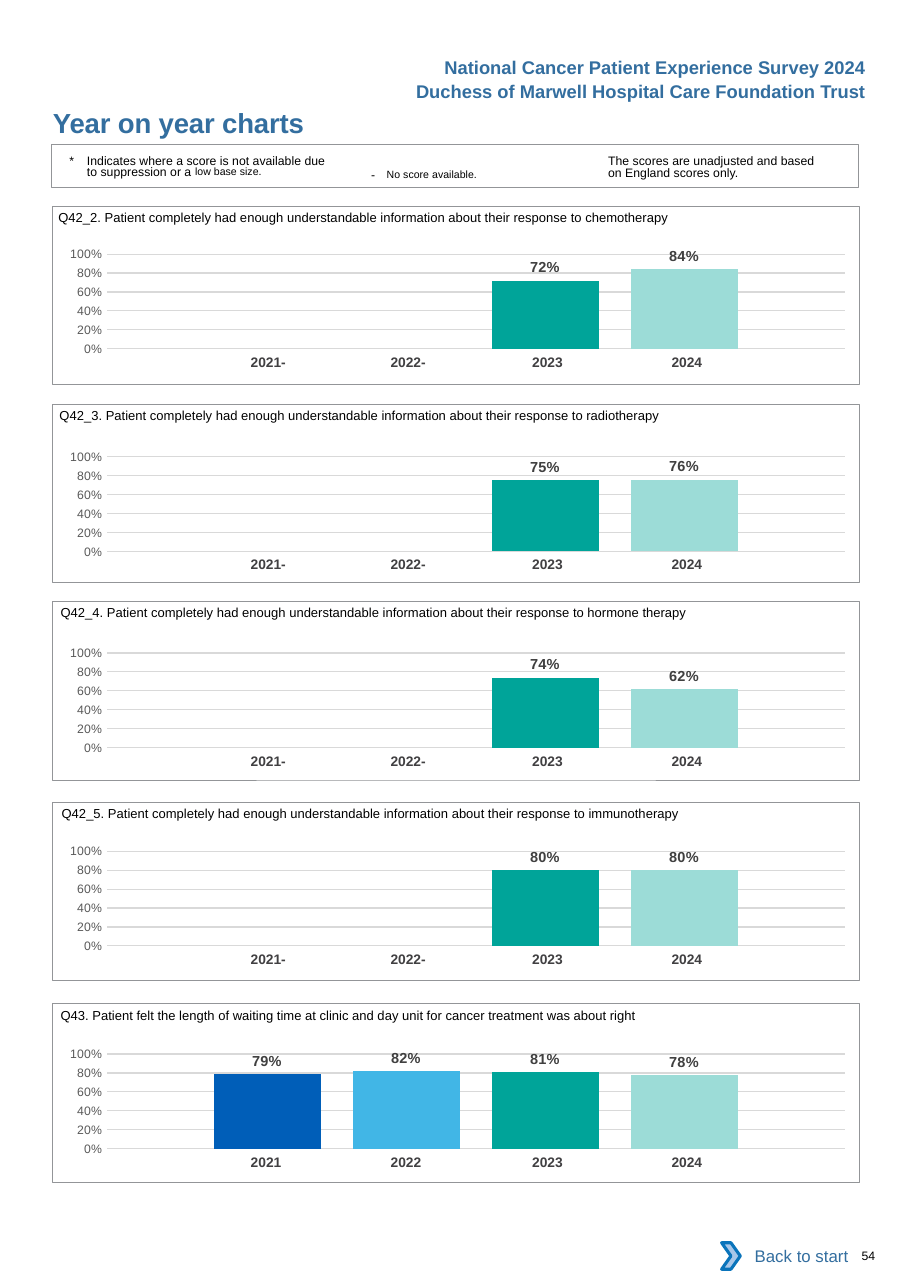
from lxml import etree
from pptx import Presentation
from pptx.chart.data import CategoryChartData
from pptx.dml.color import RGBColor
from pptx.enum.chart import XL_CHART_TYPE, XL_LABEL_POSITION, XL_TICK_LABEL_POSITION, XL_TICK_MARK
from pptx.enum.shapes import MSO_SHAPE
from pptx.enum.text import MSO_ANCHOR, MSO_AUTO_SIZE, PP_ALIGN
from pptx.oxml import parse_xml
from pptx.oxml.ns import nsdecls, qn
from pptx.util import Inches, Pt

COLORS = {
    "heading": "336E9F", "text": "000000", "frame": "939598", "year": "414042",
    "axis": "595959", "grid": "D9D9D9", "label": "404040", "white": "FFFFFF",
    "arrow": "A8C7E9", "arrow_line": "0A74BB",
}
YEAR_COLORS = {"2021": "005EB8", "2022": "41B6E6", "2023": "00A499", "2024": "9CDCD7"}
YEAR_WIDTHS = [1.27, 1.27, 1.34, 1.27]
YEAR_RIGHT_MARGINS = [0, 0, 0.04, 0.12]
RESPONSE = "Patient completely had enough understandable information about their response to "
PANELS = [
    (1.87, 2.12, 0.53, "Q42_2. " + RESPONSE + "chemotherapy", [None, None, 0.72, 0.84]),
    (3.67, 3.96, 0.54, "Q42_3. " + RESPONSE + "radiotherapy", [None, None, 0.75, 0.76]),
    (5.46, 5.74, 0.55, "Q42_4. " + RESPONSE + "hormone therapy", [None, None, 0.74, 0.62]),
    (7.28, 7.54, 0.56, "Q42_5. " + RESPONSE + "immunotherapy", [None, None, 0.8, 0.8]),
    (9.11, 9.38, 0.55,
     "Q43. Patient felt the length of waiting time at clinic and day unit for cancer "
     "treatment was about right", [0.79, 0.82, 0.81, 0.78]),
]


def rgb(name):
    """Return the palette colour with this name."""
    return RGBColor.from_string(COLORS[name])


def format_font(font, size, color, bold=False):
    """Apply the slide's font with a size, colour and weight."""
    font.name = "Arial"
    font.size = Pt(size)
    font.bold = bold
    font.color.rgb = rgb(color)


def set_margins(area, left=0, top=0, right=0, bottom=0):
    """Set the inner margins of a text frame or table cell in inches."""
    area.margin_left, area.margin_top = Inches(left), Inches(top)
    area.margin_right, area.margin_bottom = Inches(right), Inches(bottom)


def add_text(slide, box, text, size, color="text", bold=False, align=PP_ALIGN.LEFT, top=0):
    """Add a one-paragraph text box and return its paragraph."""
    frame = slide.shapes.add_textbox(*map(Inches, box)).text_frame
    frame.word_wrap = True
    set_margins(frame, top=top)
    paragraph = frame.paragraphs[0]
    paragraph.text = text
    paragraph.alignment = align
    for run in paragraph.runs:
        format_font(run.font, size, color, bold)
    return paragraph


def add_raised_run(paragraph, text, baseline):
    """Append a 12 pt run raised by a share of the line, in thousandths of a percent."""
    run = paragraph.add_run()
    run.text = text
    format_font(run.font, 12, "text")
    run._r.get_or_add_rPr().set("baseline", str(baseline))


def add_frame(slide, box, width):
    """Add an unfilled grey outline."""
    frame = slide.shapes.add_shape(MSO_SHAPE.RECTANGLE, *map(Inches, box))
    frame.shadow.inherit = False
    frame.fill.background()
    frame.line.color.rgb = rgb("frame")
    frame.line.width = Pt(width)


def add_years(slide, top, scores):
    """Add the row of years, marking those without a score with a dash."""
    table = slide.shapes.add_table(
        1, 4, Inches(1.73), Inches(top), Inches(sum(YEAR_WIDTHS)), Inches(0.27)).table
    table.first_row = table.horz_banding = False
    for column, (year, score) in enumerate(zip(YEAR_COLORS, scores)):
        table.columns[column].width = Inches(YEAR_WIDTHS[column])
        cell = table.cell(0, column)
        cell.fill.background()
        left = 0.14 if score is None else 0.1
        set_margins(cell, left, 0.05, YEAR_RIGHT_MARGINS[column], 0.05)
        paragraph = cell.text_frame.paragraphs[0]
        paragraph.text = year + "-" if score is None else year
        paragraph.alignment = PP_ALIGN.CENTER
        format_font(paragraph.runs[0].font, 9, "year", True)


def set_plot_area(chart):
    """Fix the inner plot area and make the chart background clear."""
    chart_space = chart._chartSpace
    plot_area = chart_space.chart.plotArea
    for old in plot_area.findall(qn("c:layout")):
        plot_area.remove(old)
    layout = parse_xml(f"<c:layout {nsdecls('c')}><c:manualLayout/></c:layout>")
    settings = {"layoutTarget": "inner", "xMode": "edge", "yMode": "edge",
                "x": "0.079", "y": "0.145", "w": "0.915", "h": "0.666"}
    for tag, value in settings.items():
        etree.SubElement(layout[0], qn(f"c:{tag}")).set("val", value)
    plot_area.insert(0, layout)
    chart_space.chart.addnext(parse_xml(
        f"<c:spPr {nsdecls('c', 'a')}><a:noFill/><a:ln><a:noFill/></a:ln></c:spPr>"))


def add_score_chart(slide, top, scores):
    """Add the column chart with one series per year."""
    data = CategoryChartData(number_format="0%")
    data.categories = ["1"]
    for number, score in enumerate(scores, 1):
        data.add_series(f"Series {number}", [score])
    chart = slide.shapes.add_chart(
        XL_CHART_TYPE.COLUMN_CLUSTERED, Inches(0.39), Inches(top), Inches(7.32),
        Inches(1.29), data).chart
    chart.has_legend = chart.has_title = False
    chart.font.name, chart.font.size = "Calibri", Pt(10)
    set_plot_area(chart)
    chart.category_axis.visible = False
    axis = chart.value_axis
    axis.minimum_scale, axis.maximum_scale, axis.major_unit = 0, 1, 0.2
    axis.major_tick_mark = axis.minor_tick_mark = XL_TICK_MARK.NONE
    axis.tick_label_position = XL_TICK_LABEL_POSITION.NEXT_TO_AXIS
    axis.tick_labels.number_format = "0%"
    axis.tick_labels.number_format_is_linked = False
    format_font(axis.tick_labels.font, 8, "axis")
    axis.format.line.fill.background()
    axis.major_gridlines.format.line.color.rgb = rgb("grid")
    axis.major_gridlines.format.line.width = Pt(0.75)
    plot = chart.plots[0]
    plot.gap_width, plot.overlap, plot.vary_by_categories = 200, -30, False
    for series, color in zip(plot.series, YEAR_COLORS.values()):
        series.format.fill.solid()
        series.format.fill.fore_color.rgb = RGBColor.from_string(color)
        labels = series.data_labels
        labels.show_value = True
        labels.position = XL_LABEL_POSITION.OUTSIDE_END
        labels.number_format, labels.number_format_is_linked = "0%", False
        format_font(labels.font, 9.5, "label", True)


def add_title(slide):
    """Place and format the slide title."""
    title = slide.shapes.title
    title.left, title.top, title.width, title.height = map(Inches, (0.47, 0.96, 4.5, 0.3))
    frame = title.text_frame
    frame.text = "Year on year charts"
    frame.auto_size = MSO_AUTO_SIZE.NONE
    frame.vertical_anchor = MSO_ANCHOR.TOP
    set_margins(frame, left=0.01)
    frame.paragraphs[0].alignment = PP_ALIGN.LEFT
    heading = frame.paragraphs[0].runs[0]
    format_font(heading.font, 18, "heading", True)
    heading._r.get_or_add_rPr().set("spc", "-10")


def add_key(slide):
    """Add the box that explains the symbols and scores."""
    add_frame(slide, (0.47, 1.31, 7.32, 0.39), 0.75)
    suppressed = add_text(
        slide, (0.63, 1.38, 2.4, 0.3),
        "*\tIndicates where a score is not available due to suppression or a ", 8, top=0.03)
    add_raised_run(suppressed, "low base size.", 7000)
    properties = suppressed._p.get_or_add_pPr()
    properties.set("marL", str(Inches(0.16)))
    properties.set("indent", str(-Inches(0.16)))
    missing = add_text(slide, (3.37, 1.41, 1.63, 0.24), "- ", 8, top=0.05)
    missing.runs[0]._r.get_or_add_rPr().set("spc", "260")
    add_raised_run(missing, "No score available.", 3000)
    unadjusted = add_text(
        slide, (5.52, 1.38, 1.95, 0.27),
        "The scores are unadjusted and based on England scores only.", 8, top=0.03)
    for paragraph in (suppressed, unadjusted):
        paragraph.line_spacing = Pt(8.1)
        paragraph.space_before = Pt(2.5)


def add_back_to_start(slide):
    """Add the footer label with its chevron."""
    label = slide.shapes.add_shape(
        MSO_SHAPE.RECTANGLE, Inches(6.62), Inches(11.19), Inches(1.18), Inches(0.42))
    chevron = slide.shapes.add_shape(
        MSO_SHAPE.CHEVRON, Inches(6.55), Inches(11.28), Inches(0.17), Inches(0.24))
    for part, color in ((label, "white"), (chevron, "arrow")):
        part.shadow.inherit = False
        part.fill.solid()
        part.fill.fore_color.rgb = rgb(color)
    label.line.fill.background()
    chevron.line.color.rgb = rgb("arrow_line")
    chevron.line.width = Pt(2)
    label.text_frame.text = "Back to start"
    label.text_frame.vertical_anchor = MSO_ANCHOR.MIDDLE
    label.text_frame.paragraphs[0].alignment = PP_ALIGN.RIGHT
    format_font(label.text_frame.paragraphs[0].runs[0].font, 11, "heading")


def main():
    """Build the slide and save it."""
    deck = Presentation()
    deck.slide_width, deck.slide_height = Inches(8.26), Inches(11.69)
    slide = deck.slides.add_slide(deck.slide_layouts[5])
    add_title(slide)
    for top, line in ((0.46, "National Cancer Patient Experience Survey 2024"),
                      (0.68, "Duchess of Marwell Hospital Care Foundation Trust")):
        add_text(slide, (3.36, top, 4.5, 0.3), line, 12, "heading", True, PP_ALIGN.RIGHT, 0.05)
    add_key(slide)
    for top, chart_top, question_left, question, scores in PANELS:
        add_text(slide, (question_left, top - 0.06, 7.24, 0.24), question, 8.5, top=0.09)
        add_years(slide, chart_top + 1.05, scores)
        add_score_chart(slide, chart_top, scores)
        add_frame(slide, (0.48, top, 7.32, 1.62), 0.5)
    add_back_to_start(slide)
    add_text(slide, (7.82, 11.33, 0.4, 0.13), "54", 8)
    deck.save("out.pptx")


if __name__ == "__main__":
    main()
